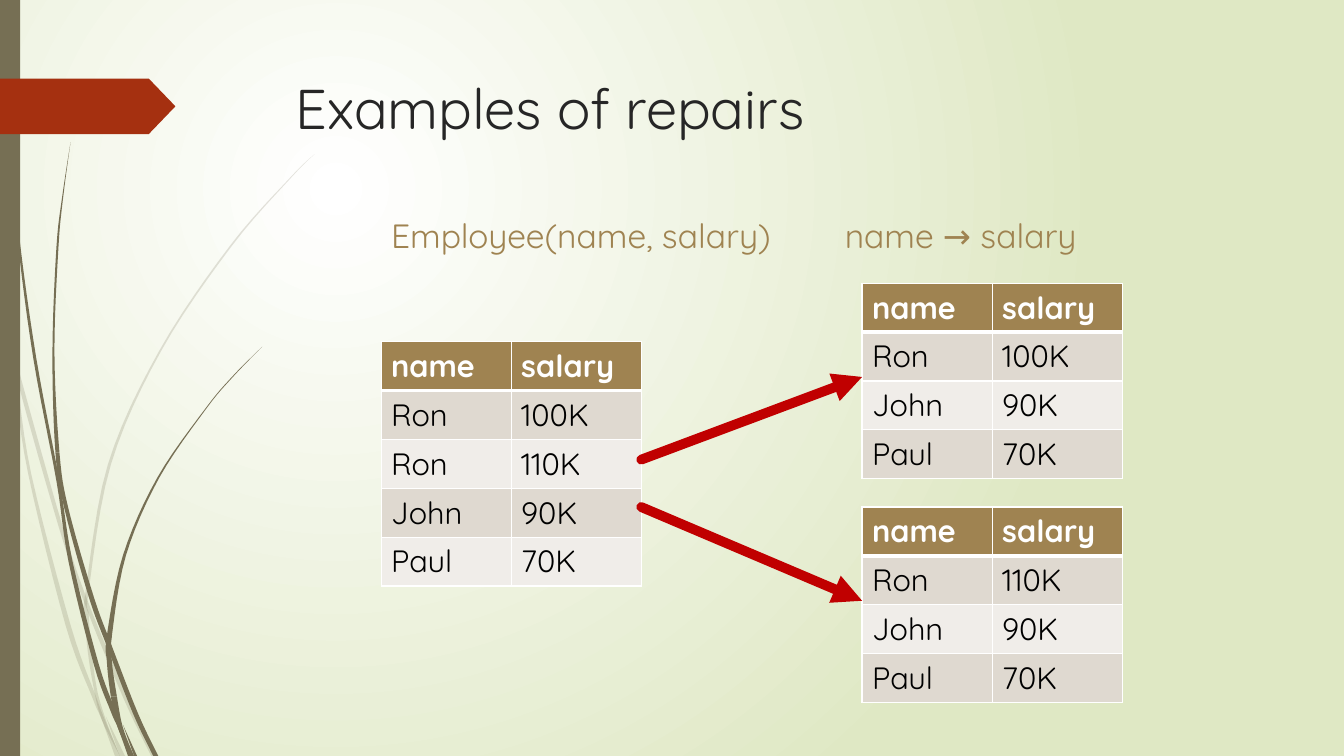
from lxml import etree
from pptx import Presentation
from pptx.dml import color
from pptx.enum import shapes, text
from pptx.oxml import ns, parse_xml
from pptx.util import Inches, Pt

FONT = "Quicksand"
OLIVE, GOLD, WHITE, RED = "766F54", "9F8351", "FFFFFF", "C00000"
BANDS = ["DFD9D0", "F0EDE9"]
ROW, COL = 0.97 / 2, 1.29

PALE = [
    ([3.5, 7.14], [
        (0, 2.82, 0), (0.11, 3.5, 0.02), (0.14, 3.76, 0.03),
        (0.28, 4.7, 0.03), (0.65, 6.2, 0.05), (0.92, 6.93, 0.04),
        (1.01, 7.14, 0.03), (1.14, 7.5, 0.05)]),
    ([], [(1.05, 7.11, 0), (1.19, 7.5, 0.05)]),
    ([5.99], [
        (0.14, 3.45, 0), (0.17, 3.76, 0.04), (0.58, 5.22, 0.04),
        (0.84, 5.99, 0.04), (1.23, 6.94, 0.05), (1.5, 7.5, 0.05)]),
    ([5.86, 6.1, 6.83], [
        (3.12, 1.53, 0), (2.89, 1.75, 0.01), (2.28, 2.44, 0.02),
        (1.58, 3.48, 0.02), (1.07, 4.61, 0.03), (0.85, 5.86, 0.03),
        (0.84, 6.1, 0.04), (0.87, 6.46, 0.04), (0.93, 6.83, 0.03),
        (1.01, 7.14, 0.04), (1.19, 7.5, 0)]),
]
DARK = [
    ([4.77, 7.22], [
        (0.03, 0, 0.01), (0.07, 1.1, 0.01), (0.17, 2.33, 0.02),
        (0.33, 3.55, 0.03), (0.56, 4.77, 0.03), (0.68, 5.57, 0.04),
        (0.93, 6.59, 0.05), (1.1, 7.06, 0.05), (1.17, 7.22, 0.03),
        (1.27, 7.5, 0.04)]),
    ([4.49, 5.05, 6.41], [
        (0.7, 1.41, 0), (0.62, 1.93, 0.01), (0.56, 2.45, 0.02),
        (0.52, 3.49, 0.02), (0.55, 4.49, 0.04), (0.64, 5.05, 0.04),
        (0.88, 5.92, 0.05), (1.06, 6.41, 0.05), (1.32, 7.08, 0.05),
        (1.52, 7.5, 0.05)]),
    ([6.31, 6.56, 6.91], [
        (2.6, 3.44, 0), (2.31, 3.73, 0.01), (2.04, 4.05, 0.01),
        (1.56, 4.74, 0.02), (1.22, 5.51, 0.03), (1.06, 6.31, 0.05),
        (1.06, 6.56, 0.05), (1.1, 6.91, 0.06), (1.17, 7.22, 0.05),
        (1.3, 7.5, 0.03)]),
    ([], [(1.22, 7.19, 0), (1.33, 7.5, 0.03)]),
]


def paint(fill, tone):
    fill.solid()
    fill.fore_color.rgb = color.RGBColor.from_string(tone)


def sub(node, tag, **attrs):
    return etree.SubElement(node, ns.qn(tag), **attrs)


def flat(shape, tone):
    shape.shadow.inherit = False
    paint(shape.fill, tone)
    shape.line.fill.background()
    return shape


def backdrop(slide):
    fill = slide.background.fill
    fill.gradient()
    for stop, tone in zip(fill.gradient_stops, [WHITE, "DFE8C4"]):
        stop.color.rgb = color.RGBColor.from_string(tone)
    grad = slide.background._cSld.find(".//" + ns.qn("a:gradFill"))
    grad.replace(grad.find(ns.qn("a:lin")), parse_xml(
        f'<a:path {ns.nsdecls("a")} path="circle">'
        '<a:fillToRect l="50000" t="50000" r="100000" b="100000"/></a:path>'))


def smooth(knots, steps=6):
    ends = [knots[0], *knots, knots[-1]]
    curve = []
    for span in zip(ends, ends[1:], ends[2:], ends[3:]):
        for step in range(steps):
            t = step / steps
            curve.append([
                b + t * (c - a) / 2 + t * t * (a - 2.5 * b + 2 * c - d / 2)
                + t ** 3 * (3 * b - 3 * c + d - a) / 2
                for a, b, c, d in zip(*span)])
    return curve + [knots[-1]]


def blade(slide, curve, alpha):
    rim = [(x, y) for x, y, w in curve]
    rim += [(x + w, y) for x, y, w in reversed(curve)]
    dots = [(Inches(x), Inches(y)) for x, y in rim]
    pen = slide.shapes.build_freeform(*dots[0])
    pen.add_line_segments(dots[1:])
    leaf = flat(pen.convert_to_shape(), OLIVE)
    if alpha < 100:
        tone = leaf._element.spPr.find(".//" + ns.qn("a:srgbClr"))
        sub(tone, "a:alpha", val=str(alpha * 1000))


def stalk(slide, cuts, knots, alpha=100):
    curve = smooth(knots)
    marks = [knots[0][1], *cuts, knots[-1][1]]
    for top, base in zip(marks, marks[1:]):
        part = [dot for dot in curve if top - 0.01 <= dot[1] <= base + 0.01]
        blade(slide, part, alpha)


def block(slide, kind, x, y, w, h, tone):
    box = slide.shapes.add_shape(
        kind, Inches(x), Inches(y), Inches(w), Inches(h))
    return flat(box, tone)


def write(para, words, size=22, tone="000000", bold=False):
    run = para.add_run()
    run.text = words
    run.font.name = FONT
    run.font.size = Pt(size)
    run.font.bold = bold
    paint(run.font.fill, tone)


def label(slide, words, x, y, w, h, wrap=True, tab=None, **style):
    box = slide.shapes.add_textbox(Inches(x), Inches(y), Inches(w), Inches(h))
    frame = box.text_frame
    frame.word_wrap = wrap
    frame.vertical_anchor = text.MSO_ANCHOR.TOP
    para = frame.paragraphs[0]
    write(para, words, **style)
    if tab:
        stops = sub(para._p.get_or_add_pPr(), "a:tabLst")
        sub(stops, "a:tab", pos=str(Inches(tab)), algn="l")


def border(cell, base):
    props = cell._tc.get_or_add_tcPr()
    for side, width in zip("LRTB", [1, 1, 1, base]):
        line = sub(props, "a:ln" + side, w=str(Pt(width)))
        sub(sub(line, "a:solidFill"), "a:srgbClr", val=WHITE)


def grid(slide, x, y, staff):
    rows = [("name", "salary"), *staff]
    frame = slide.shapes.add_table(
        len(rows), 2, Inches(x), Inches(y),
        Inches(2 * COL), Inches(ROW * len(rows)))
    table = frame.table
    for col in table.columns:
        col.width = Inches(COL)
    for i, row in enumerate(rows):
        table.rows[i].height = Inches(ROW)
        head = i == 0
        for j, words in enumerate(row):
            cell = table.cell(i, j)
            border(cell, 3 if head else 1)
            paint(cell.fill, GOLD if head else BANDS[(i - 1) % 2])
            write(cell.text_frame.paragraphs[0], words, bold=head,
                  tone=WHITE if head else "000000")


def arrow(slide, x1, y1, x2, y2):
    link = slide.shapes.add_connector(
        shapes.MSO_CONNECTOR.STRAIGHT,
        Inches(x1), Inches(y1), Inches(x2), Inches(y2))
    link.line.width = Pt(7)
    paint(link.line.fill, RED)
    line = link.line._get_or_add_ln()
    line.set("cap", "rnd")
    sub(line, "a:tailEnd", type="triangle")
    sub(link._element.spPr, "a:effectLst")


def main():
    deck = Presentation()
    deck.slide_width, deck.slide_height = Inches(13.33), Inches(7.5)
    slide = deck.slides.add_slide(deck.slide_layouts[6])
    backdrop(slide)
    for tuft, alpha in [(PALE, 20), (DARK, 100)]:
        for cuts, knots in tuft:
            stalk(slide, cuts, knots, alpha)
    kinds = shapes.MSO_SHAPE
    block(slide, kinds.RECTANGLE, 0, 0, 0.2, 7.5, OLIVE)
    flag = block(slide, kinds.PENTAGON, 0, 0.78, 1.74, 0.55, "A53010")
    flag.adjustments[0] = 0.48

    label(slide, "Examples of repairs", 2.83, 0.68, 9.75, 1.4,
          size=40, tone="262626")
    rest = [("John", "90K"), ("Paul", "70K")]
    first, second = ("Ron", "100K"), ("Ron", "110K")
    grid(slide, 3.78, 3.39, [first, second, *rest])
    grid(slide, 8.55, 2.81, [first, *rest])
    grid(slide, 8.55, 5.03, [second, *rest])
    arrow(slide, 6.36, 4.56, 8.55, 3.74)
    arrow(slide, 6.36, 5.03, 8.55, 5.96)
    label(slide, "Employee(name, salary)\tname → salary", 3.78, 2.08,
          7.35, 0.5, wrap=False, tab=4.5, size=24, tone=GOLD)
    deck.save("out.pptx")


if __name__ == "__main__":
    main()
